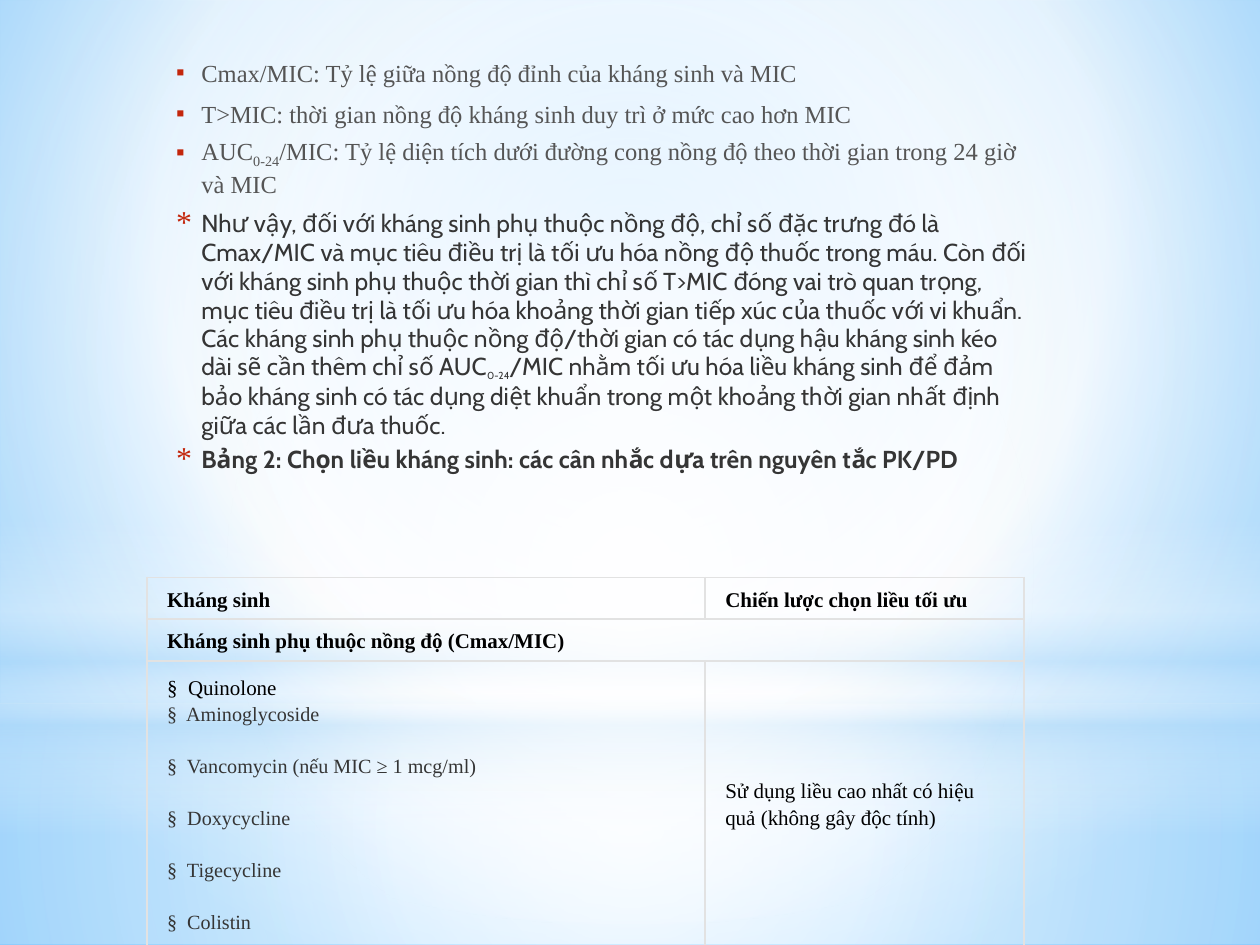
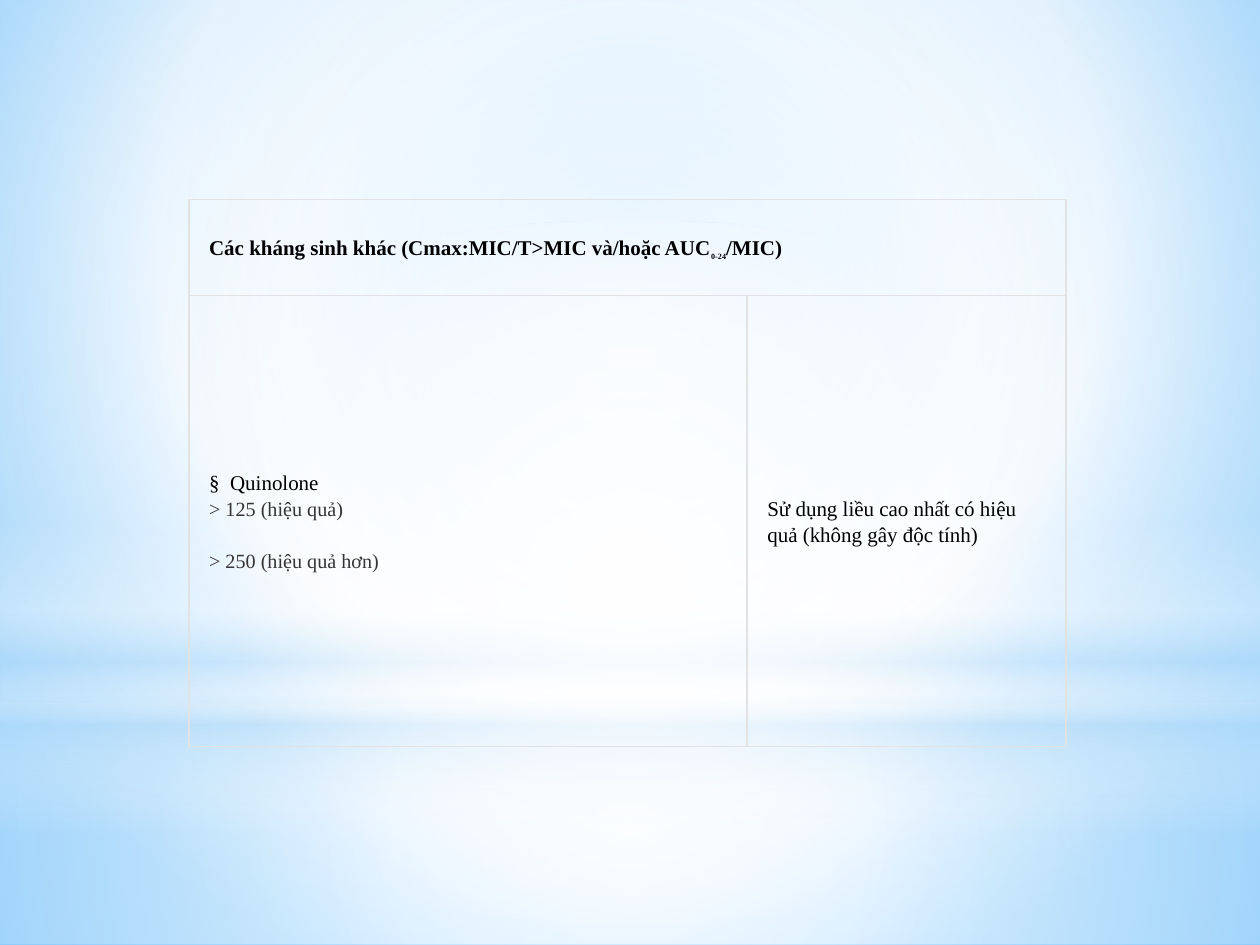
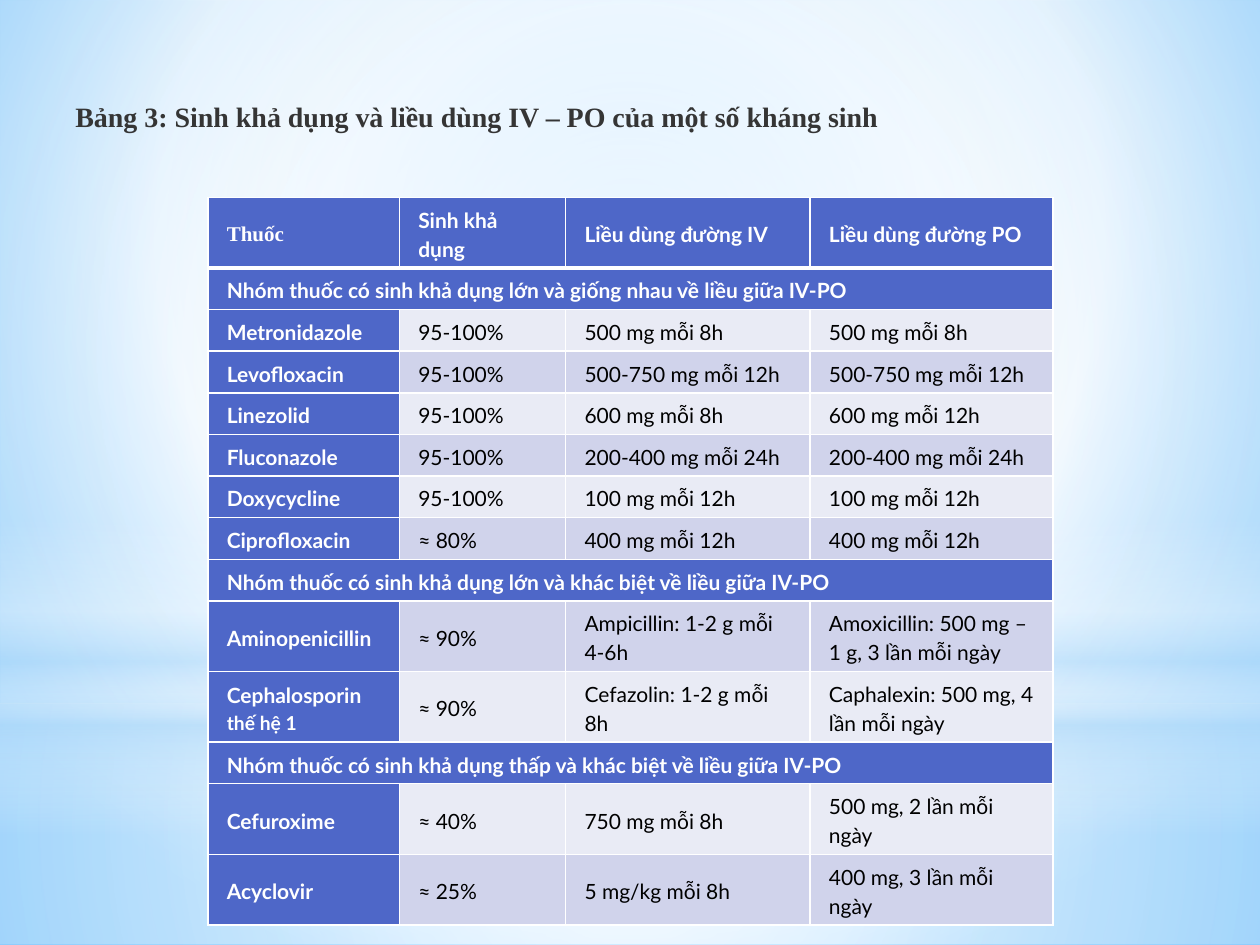
from lxml.etree import SubElement
from pptx import Presentation
from pptx.dml.color import RGBColor
from pptx.enum.shapes import MSO_SHAPE
from pptx.enum.text import MSO_ANCHOR
from pptx.oxml.ns import qn
from pptx.util import Inches, Pt

COLUMN = Inches(10) / 120
ROW = Inches(7.5) / 90

WHITE = RGBColor(0xFF, 0xFF, 0xFF)
BLACK = RGBColor(0x00, 0x00, 0x00)
SKY = RGBColor(0x9E, 0xD5, 0xFF)
AZURE = RGBColor(0x5B, 0xB9, 0xFF)
MIST = RGBColor(0xB4, 0xDC, 0xFA)
CHARCOAL = RGBColor(0x35, 0x35, 0x35)
GREY = RGBColor(0x55, 0x55, 0x55)
RED = RGBColor(0xC3, 0x26, 0x0C)
RULE = RGBColor(0xE2, 0xE2, 0xE2)
INDIGO = RGBColor(0x4E, 0x67, 0xC8)
LIGHT_BAND = RGBColor(0xE9, 0xEB, 0xF5)
DARK_BAND = RGBColor(0xD0, 0xD3, 0xEB)

SERIF = "Times New Roman"
PLAIN = {"name": SERIF, "size": Pt(12), "bold": False, "color": BLACK}
HEADING = {**PLAIN, "bold": True}
DETAIL = {**PLAIN, "size": Pt(11.5), "color": CHARCOAL}
DEFINITION = {"name": SERIF, "size": Pt(14), "bold": False, "color": GREY}
BODY = {**DEFINITION, "name": "Cabin", "color": CHARCOAL}
TITLE = {"name": SERIF, "size": Pt(16), "bold": True, "color": CHARCOAL}
DOSE = {**PLAIN, "name": "Lato"}
DRUG = {**DOSE, "bold": True, "color": WHITE}

CELL_SPACING = {"line_spacing": 1.15}
ITEM_SPACING = {"line_spacing": 1.15, "space_after": Pt(15)}
BODY_SPACING = {"line_spacing": Pt(16.5), "space_before": Pt(3)}
STRATEGY = "Sử dụng liều cao nhất có hiệu quả (không gây độc tính)"
STRATEGY_COLUMNS = [53.16, 30.36]

CIRCLE_CENTRE = (50, 50, 50, 50)
BACKGROUND_STOPS = [(0, SKY, 100), (60, WHITE, 100), (100, AZURE, 100)]
BACKDROP = [
    (MSO_SHAPE.RECTANGLE, (0, 67, 120, 23), CIRCLE_CENTRE,
     [(0, WHITE, 91), (37, WHITE, 76), (100, MIST, 79)]),
    (MSO_SHAPE.RECTANGLE, (0, 0, 120, 67), CIRCLE_CENTRE,
     [(0, WHITE, 89), (48, WHITE, 62), (100, MIST, 79)]),
    (MSO_SHAPE.RECTANGLE, (0, 49.5, 120, 30), None,
     [(0, WHITE, 0), (29, WHITE, 30), (45, MIST, 40),
      (55, WHITE, 26), (65, MIST, 60), (100, WHITE, 0)]),
    (MSO_SHAPE.OVAL, (0, 21, 120, 67), CIRCLE_CENTRE,
     [(0, WHITE, 100), (56, WHITE, 0)]),
]

DEFINITIONS = [
    ["Cmax/MIC: Tỷ lệ giữa nồng độ đỉnh của kháng sinh và MIC"],
    ["T>MIC: thời gian nồng độ kháng sinh duy trì ở mức cao hơn MIC"],
    ["AUC", "0-24", "/MIC: Tỷ lệ diện tích dưới đường cong nồng độ theo thời gian trong 24 giờ và MIC"],
]
CONCLUSION = [
    "Như vậy, đối với kháng sinh phụ thuộc nồng độ, chỉ số đặc trưng đó là Cmax/MIC và mục tiêu "
    "điều trị là tối ưu hóa nồng độ thuốc trong máu. Còn đối với kháng sinh phụ thuộc thời gian thì "
    "chỉ số T>MIC đóng vai trò quan trọng, mục tiêu điều trị là tối ưu hóa khoảng thời gian tiếp xúc "
    "của thuốc với vi khuẩn. Các kháng sinh phụ thuộc nồng độ/thời gian có tác dụng hậu kháng sinh "
    "kéo dài sẽ cần thêm chỉ số AUC",
    "0-24",
    "/MIC nhằm tối ưu hóa liều kháng sinh để đảm bảo kháng sinh có tác dụng diệt khuẩn trong một "
    "khoảng thời gian nhất định giữa các lần đưa thuốc.",
]
ANTIBIOTICS = ["Aminoglycoside", "Vancomycin (nếu MIC ≥ 1 mcg/ml)", "Doxycycline", "Tigecycline", "Colistin"]
DOSES = [
    ["Thuốc", "Sinh khả dụng", "Liều dùng đường IV", "Liều dùng đường PO"],
    ["Nhóm thuốc có sinh khả dụng lớn và giống nhau về liều giữa IV-PO"],
    ["Metronidazole", "95-100%", "500 mg mỗi 8h", "500 mg mỗi 8h"],
    ["Levofloxacin", "95-100%", "500-750 mg mỗi 12h", "500-750 mg mỗi 12h"],
    ["Linezolid", "95-100%", "600 mg mỗi 8h", "600 mg mỗi 12h"],
    ["Fluconazole", "95-100%", "200-400 mg mỗi 24h", "200-400 mg mỗi 24h"],
    ["Doxycycline", "95-100%", "100 mg mỗi 12h", "100 mg mỗi 12h"],
    ["Ciprofloxacin", "≈ 80%", "400 mg mỗi 12h", "400 mg mỗi 12h"],
    ["Nhóm thuốc có sinh khả dụng lớn và khác biệt về liều giữa IV-PO"],
    ["Aminopenicillin", "≈ 90%", "Ampicillin: 1-2 g mỗi 4-6h", "Amoxicillin: 500 mg – 1 g, 3 lần mỗi ngày"],
    ["Cephalosporin", "≈ 90%", "Cefazolin: 1-2 g mỗi 8h", "Caphalexin: 500 mg, 4 lần mỗi ngày"],
    ["Nhóm thuốc có sinh khả dụng thấp và khác biệt về liều giữa IV-PO"],
    ["Cefuroxime", "≈ 40%", "750 mg mỗi 8h", "500 mg, 2 lần mỗi ngày"],
    ["Acyclovir", "≈ 25%", "5 mg/kg mỗi 8h", "400 mg, 3 lần mỗi ngày"],
]


def place(left, top, width, height):
    return [round(length) for length in (left * COLUMN, top * ROW, width * COLUMN, height * ROW)]


def set_attributes(target, values):
    for name, value in values.items():
        setattr(target, name, value)


def add_color(parent, color, opacity=100):
    element = SubElement(parent, qn("a:srgbClr"), val=str(color))
    if opacity < 100:
        SubElement(element, qn("a:alpha"), val=str(opacity * 1000))


def apply_gradient(fill, owner, stops, focus):
    fill.solid()
    solid = next(owner.iter(qn("a:solidFill")))
    gradient = SubElement(solid.getparent(), qn("a:gradFill"), rotWithShape="1")
    stop_list = SubElement(gradient, qn("a:gsLst"))
    for position, color, opacity in stops:
        add_color(SubElement(stop_list, qn("a:gs"), pos=str(position * 1000)), color, opacity)
    if focus:
        shade = SubElement(gradient, qn("a:path"), path="circle")
        edges = {edge: str(share * 1000) for edge, share in zip("ltrb", focus)}
        SubElement(shade, qn("a:fillToRect"), edges)
    else:
        SubElement(gradient, qn("a:lin"), ang="5400000", scaled="0")
    solid.getparent().replace(solid, gradient)


def build_backdrop(layout, slide):
    for placeholder in list(layout.placeholders):
        placeholder.element.getparent().remove(placeholder.element)
    apply_gradient(layout.background.fill, layout.element, BACKGROUND_STOPS, (20, 10, 20, 60))
    for preset, box, focus, stops in BACKDROP:
        shape = slide.shapes.add_shape(preset, *place(*box))
        shape.shadow.inherit = False
        apply_gradient(shape.fill, shape.element, stops, focus)
        shape.line.fill.background()
        layout.shapes.element.append(shape.element)


def write_runs(paragraph, texts, style, small=None):
    for index, text in enumerate(texts):
        subscript = index % 2 == 1
        run = paragraph.add_run()
        run.text = text
        values = dict(style)
        run.font.color.rgb = values.pop("color")
        if subscript:
            values["size"] = small or values["size"]
            run.font._element.set("baseline", "-25000")
        set_attributes(run.font, values)


def write_paragraphs(frame, paragraphs):
    for index, (texts, style, spacing, small) in enumerate(paragraphs):
        paragraph = frame.add_paragraph() if index else frame.paragraphs[0]
        set_attributes(paragraph, spacing)
        write_runs(paragraph, texts, style, small)


def line(text, style, spacing=CELL_SPACING):
    return [text], style, spacing, None


def add_bullet(paragraph, symbol, percent):
    properties = paragraph._p.get_or_add_pPr()
    properties.set("marL", str(Inches(0.25)))
    properties.set("indent", str(-Inches(0.2)))
    add_color(SubElement(properties, qn("a:buClr")), RED)
    SubElement(properties, qn("a:buSzPct"), val=str(percent * 1000))
    SubElement(properties, qn("a:buFont"), typeface=SERIF)
    SubElement(properties, qn("a:buChar"), char=symbol)


def add_text(slide, box, paragraphs, wrap=True, anchor=MSO_ANCHOR.TOP):
    frame = slide.shapes.add_textbox(*place(*box)).text_frame
    set_attributes(frame, {"word_wrap": wrap, "vertical_anchor": anchor})
    write_paragraphs(frame, paragraphs)
    return frame


def add_borders(cell, color, widths):
    properties = cell._tc.get_or_add_tcPr()
    for side, width in zip("LRTB", widths):
        border = SubElement(properties, qn(f"a:ln{side}"), w=str(Pt(width)))
        add_color(SubElement(border, qn("a:solidFill")), color)


def add_table(slide, left, top, columns, rows):
    box = place(left, top, sum(columns), sum(rows))
    table = slide.shapes.add_table(len(rows), len(columns), *box).table
    set_attributes(table, {"first_row": False, "horz_banding": False})
    for column, width in zip(table.columns, columns):
        column.width = round(width * COLUMN)
    for row, height in zip(table.rows, rows):
        row.height = round(height * ROW)
    return table


def format_cell(cell, paragraphs, border, inset, fill=None, widths=(1, 1, 1, 1)):
    margins = {"margin_left": inset, "margin_right": inset, "margin_top": Inches(0.05),
               "margin_bottom": Inches(0.05), "vertical_anchor": MSO_ANCHOR.MIDDLE}
    set_attributes(cell, margins)
    add_borders(cell, border, widths)
    if fill is None:
        cell.fill.background()
    else:
        cell.fill.solid()
        cell.fill.fore_color.rgb = fill
    write_paragraphs(cell.text_frame, paragraphs)


def merge_row(table, row):
    table.cell(row, 0).merge(table.cell(row, len(table.columns) - 1))


def add_strategy_table(slide, left, top, heights, content):
    table = add_table(slide, left, top, STRATEGY_COLUMNS, heights)
    for row, cells in enumerate(content):
        if len(cells) == 1:
            merge_row(table, row)
        for column in range(len(STRATEGY_COLUMNS)):
            paragraphs = cells[column] if column < len(cells) else []
            format_cell(table.cell(row, column), paragraphs, RULE, Inches(0.16))


def build_index_slide(slide):
    paragraphs = [(texts, DEFINITION, {**BODY_SPACING, "space_after": Pt(3.8 if len(texts) == 1 else 3)}, None)
                  for texts in DEFINITIONS]
    paragraphs.append((CONCLUSION, BODY, BODY_SPACING, Pt(10)))
    paragraphs.append(line("Bảng 2: Chọn liều kháng sinh: các cân nhắc dựa trên nguyên tắc PK/PD",
                           {**BODY, "bold": True}, BODY_SPACING))
    frame = add_text(slide, (15, 5, 84, 43), paragraphs)
    for index, paragraph in enumerate(frame.paragraphs):
        add_bullet(paragraph, *(("▪", 100) if index < len(DEFINITIONS) else ("*", 130)))
    antibiotics = [line("§\u00a0 Quinolone", PLAIN)]
    antibiotics += [line(f"§\u00a0 {name}", DETAIL, ITEM_SPACING) for name in ANTIBIOTICS]
    add_strategy_table(slide, 14, 55, [3.84, 3.84, 26], [
        [[line("Kháng sinh", HEADING)], [line("Chiến lược chọn liều tối ưu", HEADING)]],
        [[line("Kháng sinh phụ thuộc nồng độ (Cmax/MIC)", HEADING)]],
        [antibiotics, [line(STRATEGY, PLAIN)]],
    ])


def build_other_slide(slide):
    heading = ["Các kháng sinh khác (Cmax:MIC/T>MIC và/hoặc AUC", "0-24", "/MIC)"]
    targets = [line("§\u00a0 Quinolone", PLAIN)]
    targets += [line(text, DETAIL, ITEM_SPACING) for text in ("> 125 (hiệu quả)", "> 250 (hiệu quả hơn)")]
    add_strategy_table(slide, 18, 19, [9.12, 42.96], [
        [[(heading, HEADING, CELL_SPACING, Pt(8))]],
        [targets, [line(STRATEGY, PLAIN)]],
    ])


def build_dose_slide(slide):
    title = "Bảng 3: Sinh khả dụng và liều dùng IV – PO của một số kháng sinh"
    add_text(slide, (6, 8.9, 79.8, 4.44), [line(title, TITLE, {})], False, MSO_ANCHOR.MIDDLE)
    columns = [18.24, 15.84, 23.28, 23.16]
    heights = [6.48 if row in (9, 10) else 3.84 for row in range(len(DOSES))]
    table = add_table(slide, 19.8, 18.8, columns, heights)
    for row, texts in enumerate(DOSES):
        if len(texts) == 1:
            merge_row(table, row)
        for column in range(len(columns)):
            strong = row == 0 or column == 0 or len(texts) == 1
            band = DARK_BAND if row % 2 else LIGHT_BAND
            style = HEADING | {"color": WHITE} if row == column == 0 else DRUG if strong else DOSE
            paragraphs = [line(text, style) for text in texts[column:column + 1]]
            if texts[0] == "Cephalosporin" and column == 0:
                paragraphs.append(line("thế hệ 1", {**DRUG, "size": Pt(11)}, ITEM_SPACING))
            widths = (1, 1, 3 if row == 1 else 1, 3 if row == 0 else 1)
            format_cell(table.cell(row, column), paragraphs, WHITE, Inches(0.15),
                        INDIGO if strong else band, widths)


def main():
    presentation = Presentation()
    set_attributes(presentation, {"slide_width": Inches(10), "slide_height": Inches(7.5)})
    layout = presentation.slide_layouts[6]
    builders = [build_index_slide, build_other_slide, build_dose_slide]
    slides = [presentation.slides.add_slide(layout) for _ in builders]
    build_backdrop(layout, slides[0])
    for build, slide in zip(builders, slides):
        build(slide)
    presentation.save("out.pptx")


if __name__ == "__main__":
    main()
